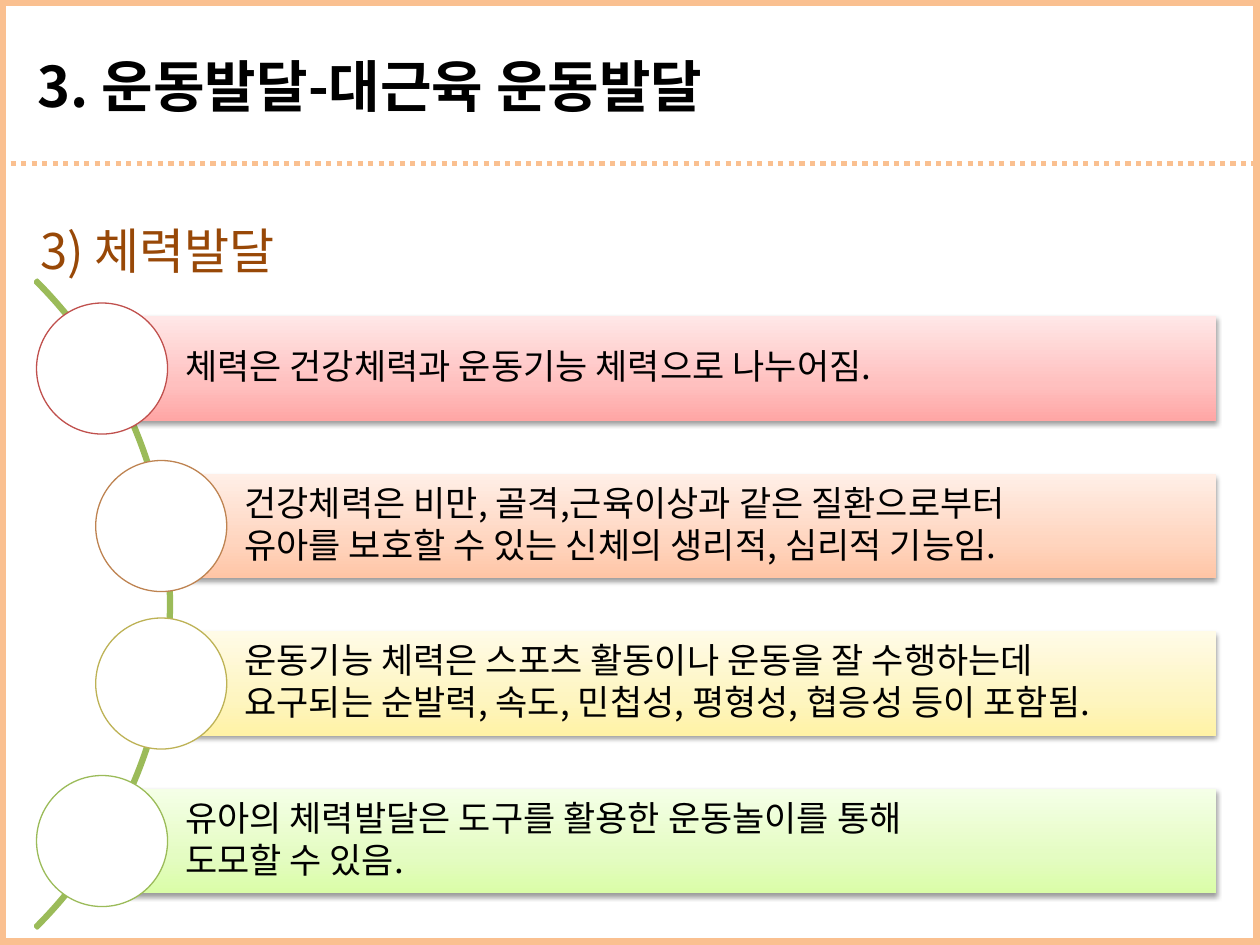
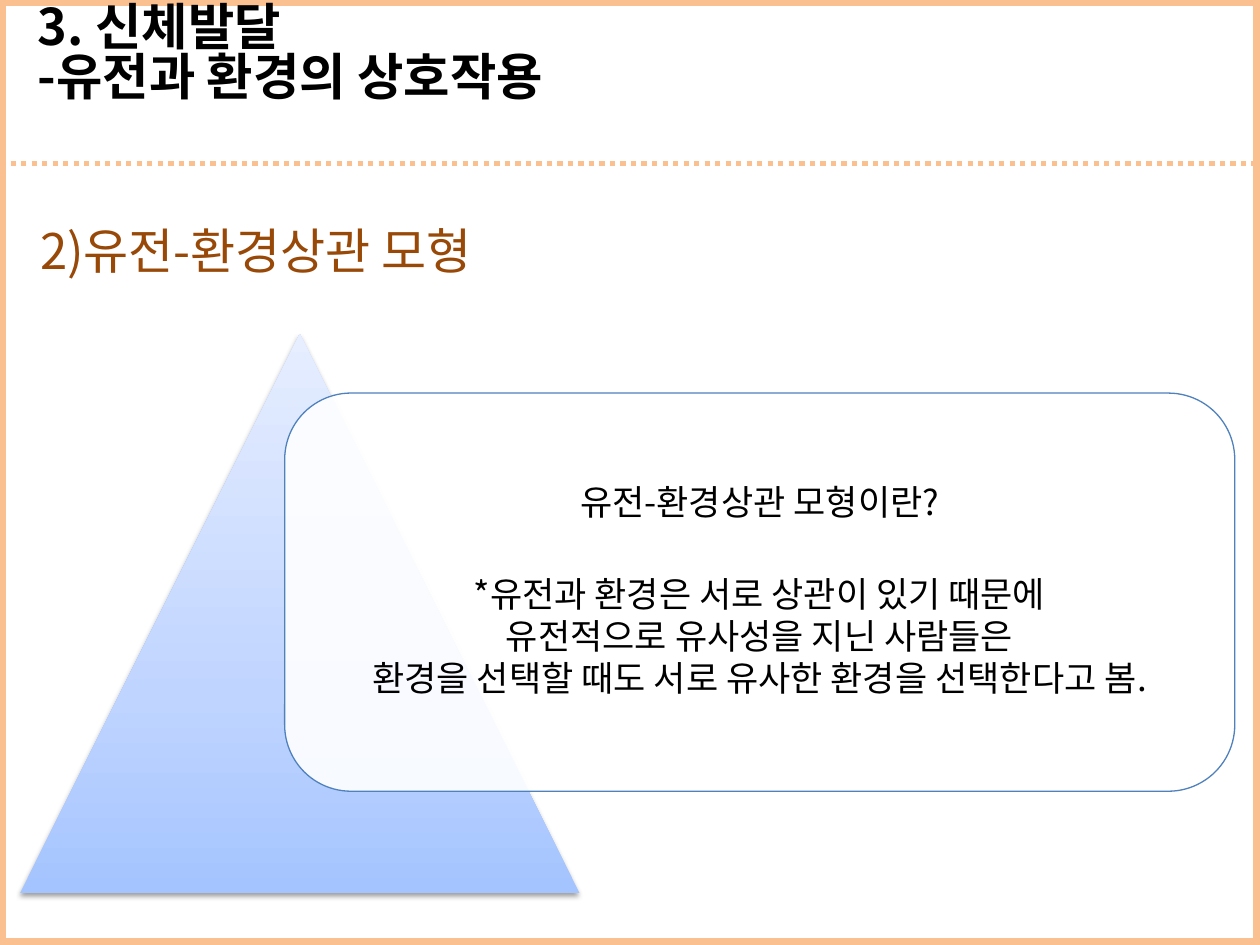
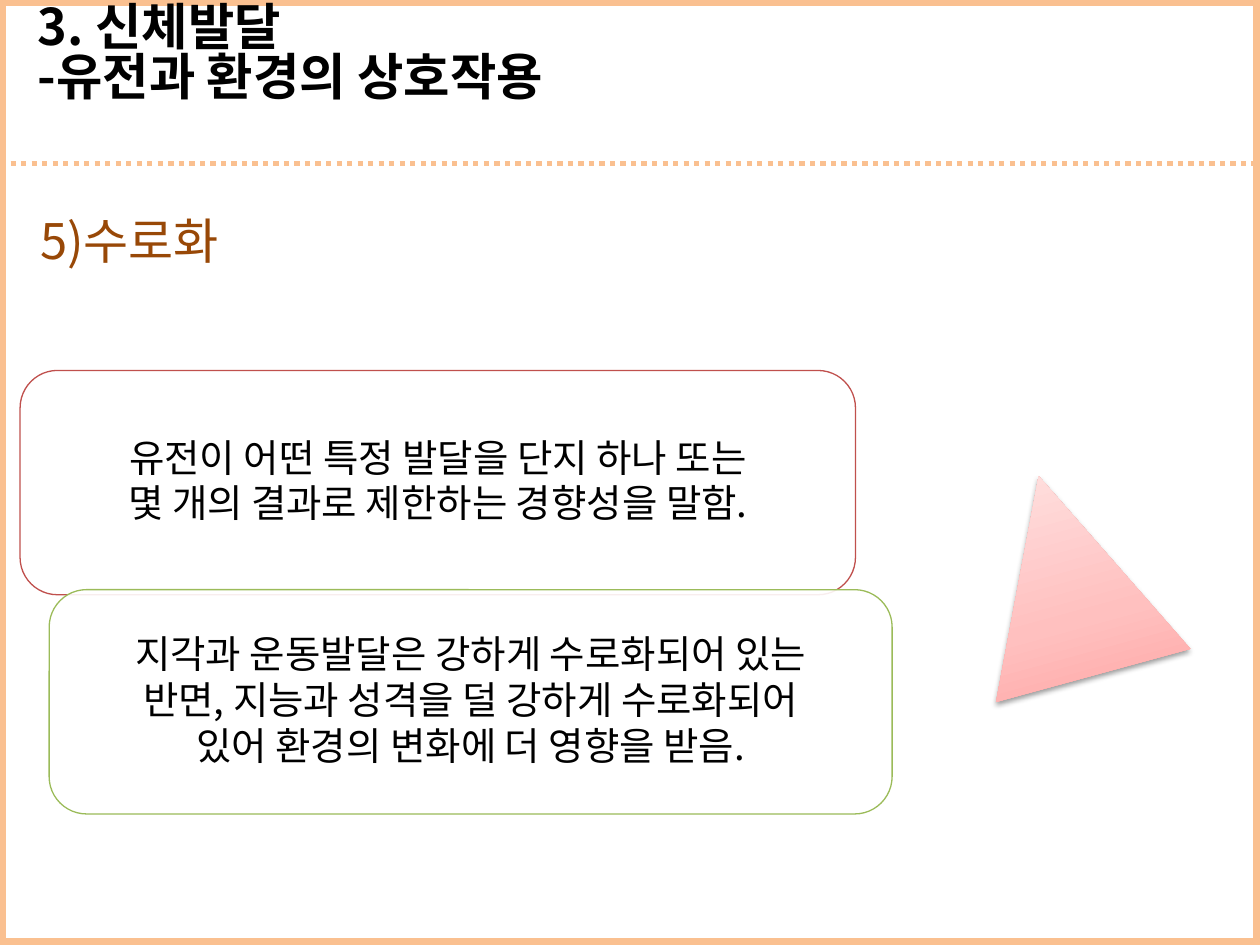
from pptx import Presentation
from pptx.dml.color import RGBColor
from pptx.enum.dml import MSO_LINE
from pptx.enum.shapes import MSO_CONNECTOR, MSO_SHAPE
from pptx.enum.text import MSO_ANCHOR, MSO_AUTO_SIZE, PP_ALIGN
from pptx.oxml import parse_xml
from pptx.oxml.ns import nsdecls, qn
from pptx.oxml.xmlchemy import OxmlElement
from pptx.util import Inches, Pt

FONT = "Noto Sans CJK KR"
BLACK = RGBColor(0x00, 0x00, 0x00)
WHITE = RGBColor(0xFF, 0xFF, 0xFF)
PEACH = RGBColor(0xFA, 0xC0, 0x90)
BROWN = RGBColor(0x98, 0x48, 0x07)
BLUE = RGBColor(0x4F, 0x81, 0xBD)
RED = RGBColor(0xC0, 0x50, 0x4D)
ORANGE = RGBColor(0xBE, 0x83, 0x51)
YELLOW = RGBColor(0xBD, 0xB2, 0x55)
GREEN = RGBColor(0x9B, 0xBB, 0x59)

# Gradient colours from bottom to top
RED_SHADES = ("FFA6A5", "FFC0BF", "FFE7E7")
ORANGE_SHADES = ("FFC5A5", "FFD5BF", "FFEFE7")
YELLOW_SHADES = ("FFF2A5", "FEF5C0", "FFFBE7")
GREEN_SHADES = ("DAFDA7", "E4FCC2", "F5FFE7")
BLUE_SHADES = ("A4C4FF", "BFD4FF", "E6EEFF")


def write_lines(text_frame, lines, size, color=BLACK, bold=False,
                spacing=0.9, after=2.5, align=PP_ALIGN.LEFT):
    text_frame.word_wrap = True
    text_frame.auto_size = MSO_AUTO_SIZE.NONE
    for index, line in enumerate(lines):
        paragraph = text_frame.add_paragraph() if index else text_frame.paragraphs[0]
        paragraph.text = line
        paragraph.alignment = align
        paragraph.line_spacing = spacing
        paragraph.space_after = Pt(after)
        paragraph.font.size = Pt(size)
        paragraph.font.bold = bold
        paragraph.font.color.rgb = color
        paragraph.font.name = FONT
        east_asian = OxmlElement("a:ea")
        east_asian.set("typeface", FONT)
        paragraph._p.pPr.find(qn("a:defRPr")).append(east_asian)


def shade(shape, shades):
    """Give a shape a three-step vertical gradient and a soft shadow."""
    stops = "".join(
        f'<a:gs pos="{position}"><a:srgbClr val="{color}"/></a:gs>'
        for position, color in zip((0, 35000, 100000), shades))
    shape.line.fill.background()
    properties = shape.element.spPr
    properties.insert(2, parse_xml(
        f'<a:gradFill {nsdecls("a")} rotWithShape="1"><a:gsLst>{stops}</a:gsLst>'
        '<a:lin ang="16200000" scaled="0"/></a:gradFill>'))
    properties.append(parse_xml(
        f'<a:effectLst {nsdecls("a")}><a:outerShdw blurRad="39370" dist="20320" '
        'dir="5400000" rotWithShape="0"><a:srgbClr val="000000">'
        '<a:alpha val="38000"/></a:srgbClr></a:outerShdw></a:effectLst>'))


presentation = Presentation()
presentation.slide_width = Inches(10)
presentation.slide_height = Inches(7.5)
layout = presentation.slide_layouts[5]
for placeholder in list(layout.placeholders):
    if placeholder.placeholder_format.idx:
        layout.shapes.element.remove(placeholder.element)

# Titles and headings: title, title size, line spacing, bottom margin, heading, heading top
INTERACTION = "3. 신체발달\v-유전과 환경의 상호작용"
PAGES = [
    ("3. 운동발달-대근육 운동발달", 32, 1.0, 0.05, "3) 체력발달", 1.47),
    (INTERACTION, 28.8, 0.82, 0.52, "2)유전-환경상관 모형", 1.47),
    (INTERACTION, 28.8, 0.82, 0.52, "5)수로화", 1.39),
]
slides = []
for title_text, size, spacing, bottom_margin, heading, heading_top in PAGES:
    slide = presentation.slides.add_slide(layout)
    slides.append(slide)
    title = slide.shapes.title
    title.left, title.top = Inches(0.2), Inches(0.21)
    title.width, title.height = Inches(9.61), Inches(0.93)
    title.text_frame.vertical_anchor = MSO_ANCHOR.MIDDLE
    title.text_frame.margin_bottom = Inches(bottom_margin)
    write_lines(title.text_frame, [title_text], size, bold=True, spacing=spacing, after=0)
    heading_box = slide.shapes.add_textbox(
        Inches(0.22), Inches(heading_top), Inches(9.58), Inches(0.95))
    write_lines(heading_box.text_frame, [heading], 28, BROWN, spacing=1.5, after=0)
fitness_slide, model_slide, canal_slide = slides

# Shared frame and dotted rule, moved to the layout behind the title
frame = fitness_slide.shapes.add_shape(
    MSO_SHAPE.FRAME, 0, 0, presentation.slide_width, presentation.slide_height)
frame.adjustments[0] = 0.005
frame.shadow.inherit = False
frame.fill.solid()
frame.fill.fore_color.rgb = PEACH
rule = fitness_slide.shapes.add_connector(
    MSO_CONNECTOR.STRAIGHT, 0, Inches(1.3), presentation.slide_width, Inches(1.3))
rule.line.dash_style = MSO_LINE.ROUND_DOT
rule.element.spPr.append(OxmlElement("a:effectLst"))
for position, (shape, width) in enumerate([(frame, 2), (rule, 3)], start=2):
    shape.line.color.rgb = PEACH
    shape.line.width = Pt(width)
    layout.shapes.element.insert(position, shape.element)

# Slide 1: arc with four bars and circles
arc = fitness_slide.shapes.add_shape(
    MSO_SHAPE.BLOCK_ARC, Inches(-5.91), Inches(1.16), Inches(7.27), Inches(7.27))
for index, value in enumerate((189, 27, 0.003)):
    arc.adjustments[index] = value
arc.shadow.inherit = False
arc.fill.background()
arc.line.color.rgb = GREEN
arc.line.width = Pt(2)

BAR_RIGHT, BAR_TOP, BAR_STEP, BAR_HEIGHT, CIRCLE = 9.65, 2.51, 1.25, 0.83, 1.04
BARS = [
    (0.81, RED, RED_SHADES, ["체력은 건강체력과 운동기능 체력으로 나누어짐."]),
    (1.28, ORANGE, ORANGE_SHADES, ["건강체력은 비만, 골격,근육이상과 같은 질환으로부터",
                                   "유아를 보호할 수 있는 신체의 생리적, 심리적 기능임."]),
    (1.28, YELLOW, YELLOW_SHADES, ["운동기능 체력은 스포츠 활동이나 운동을 잘 수행하는데",
                                   "요구되는 순발력, 속도, 민첩성, 평형성, 협응성 등이 포함됨."]),
    (0.81, GREEN, GREEN_SHADES, ["유아의 체력발달은 도구를 활용한 운동놀이를 통해",
                                 "도모할 수 있음."]),
]
for row, (left, color, shades, lines) in enumerate(BARS):
    top = BAR_TOP + row * BAR_STEP
    bar = fitness_slide.shapes.add_shape(
        MSO_SHAPE.RECTANGLE, Inches(left), Inches(top),
        Inches(BAR_RIGHT - left), Inches(BAR_HEIGHT))
    shade(bar, shades)
    text_frame = bar.text_frame
    text_frame.vertical_anchor = MSO_ANCHOR.MIDDLE
    text_frame.margin_left = Inches(0.66)
    text_frame.margin_right = text_frame.margin_top = text_frame.margin_bottom = Inches(0.06)
    write_lines(text_frame, lines, 20)
    circle = fitness_slide.shapes.add_shape(
        MSO_SHAPE.OVAL, Inches(left - CIRCLE / 2),
        Inches(top + (BAR_HEIGHT - CIRCLE) / 2), Inches(CIRCLE), Inches(CIRCLE))
    circle.shadow.inherit = False
    circle.fill.solid()
    circle.fill.fore_color.rgb = WHITE
    circle.line.color.rgb = color
    circle.line.width = Pt(0.75)

# Slides 2 and 3: shaded triangles
TRIANGLES = [
    (model_slide, 0.16, 2.65, 4.44, 4.44, 0, BLUE_SHADES),
    (canal_slide, 7.66, 3.75, 1.6, 1.64, 344.7, RED_SHADES),
]
for slide, left, top, width, height, rotation, shades in TRIANGLES:
    triangle = slide.shapes.add_shape(
        MSO_SHAPE.ISOSCELES_TRIANGLE, Inches(left), Inches(top), Inches(width), Inches(height))
    triangle.rotation = rotation
    shade(triangle, shades)

# Slides 2 and 3: translucent rounded cards
CARDS = [
    (model_slide, 2.26, 3.12, 7.54, 3.16, BLUE, 20,
     ["유전-환경상관 모형이란?",
      "*유전과 환경은 서로 상관이 있기 때문에",
      "유전적으로 유사성을 지닌 사람들은",
      "환경을 선택할 때도 서로 유사한 환경을 선택한다고 봄."]),
    (canal_slide, 0.16, 2.94, 6.63, 1.78, RED, 22,
     ["유전이 어떤 특정 발달을 단지 하나 또는",
      "몇 개의 결과로 제한하는 경향성을 말함."]),
    (canal_slide, 0.39, 4.68, 6.69, 1.78, GREEN, 22,
     ["지각과 운동발달은 강하게 수로화되어 있는",
      "반면, 지능과 성격을 덜 강하게 수로화되어",
      "있어 환경의 변화에 더 영향을 받음."]),
]
for slide, left, top, width, height, color, size, lines in CARDS:
    card = slide.shapes.add_shape(
        MSO_SHAPE.ROUNDED_RECTANGLE, Inches(left), Inches(top), Inches(width), Inches(height))
    card.shadow.inherit = False
    card.fill.solid()
    card.fill.fore_color.rgb = WHITE
    alpha = OxmlElement("a:alpha")
    alpha.set("val", "90000")
    card.element.spPr.find(qn("a:solidFill"))[0].append(alpha)
    card.line.color.rgb = color
    card.line.width = Pt(0.75)
    text_frame = card.text_frame
    text_frame.vertical_anchor = MSO_ANCHOR.MIDDLE
    text_frame.margin_left = text_frame.margin_right = Inches(0.08)
    text_frame.margin_top = text_frame.margin_bottom = Inches(0.08)
    write_lines(text_frame, lines, size, align=PP_ALIGN.CENTER)
    if slide is model_slide:
        text_frame.paragraphs[0].space_after = Pt(31)

presentation.save("out.pptx")
